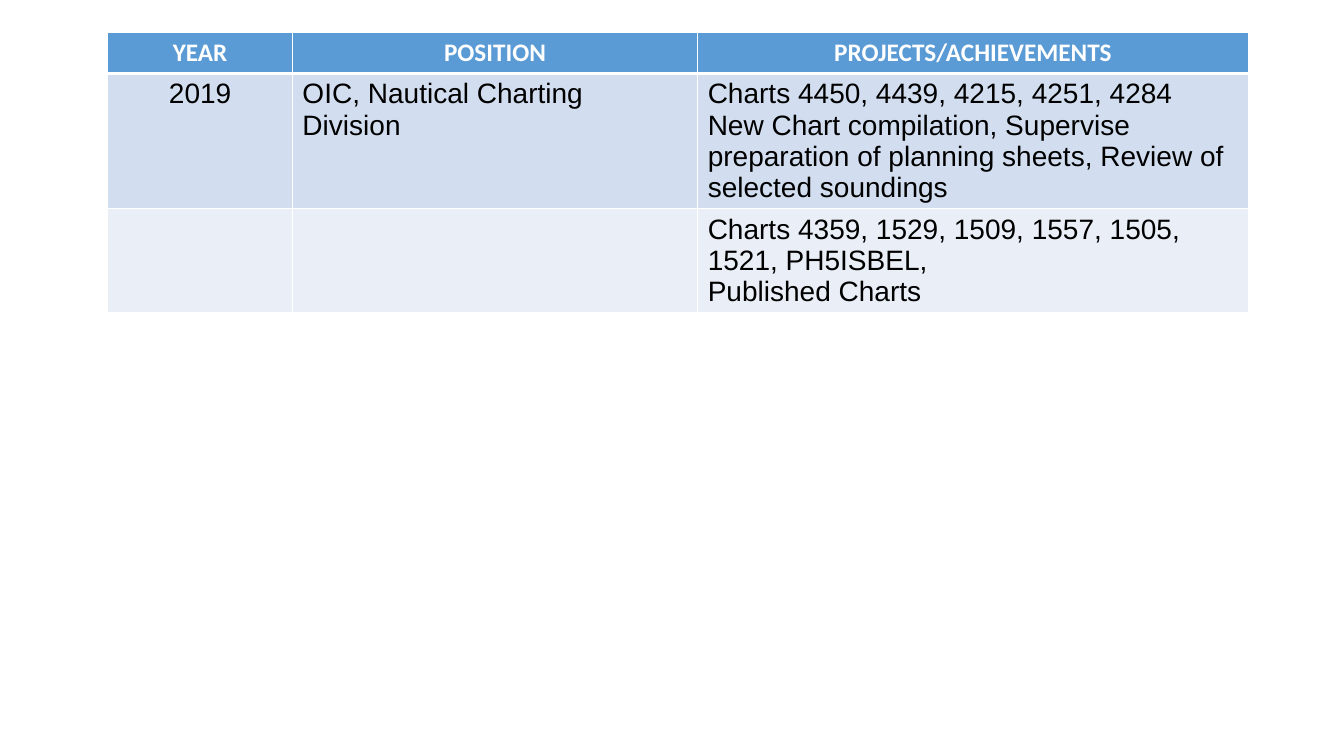
from lxml.etree import SubElement
from pptx import Presentation
from pptx.dml.color import RGBColor
from pptx.enum.text import PP_ALIGN
from pptx.oxml.ns import qn
from pptx.util import Inches, Pt


def color(value):
    return RGBColor.from_string(value)


def add_borders(cell, widths):
    properties = cell._tc.get_or_add_tcPr()
    for position, (side, points) in enumerate(widths.items()):
        line = SubElement(properties, qn(f"a:ln{side}"), w=str(Pt(points)))
        fill = SubElement(line, qn("a:solidFill"))
        SubElement(fill, qn("a:srgbClr"), val="FFFFFF")
        properties.insert(position, line)


deck = Presentation()
deck.slide_width = Inches(13.33)
deck.slide_height = Inches(7.5)
page = deck.slides.add_slide(deck.slide_layouts[6])

column_widths = [1.83, 4.02, 5.46]
row_fills = ["5B9BD5", "D2DEEF", "EAEFF7"]
header_format = {"name": "Calibri", "size": Pt(18), "bold": True}
body_format = {"name": "Arial", "size": Pt(20), "bold": False}
career_rows = [
    [["YEAR"], ["POSITION"], ["PROJECTS/ACHIEVEMENTS"]],
    [
        ["2019"],
        ["OIC, Nautical Charting Division"],
        [
            "Charts 4450, 4439, 4215, 4251, 4284",
            "New Chart compilation, Supervise preparation of planning sheets, Review of selected soundings",
        ],
    ],
    [
        [],
        [],
        ["Charts 4359, 1529, 1509, 1557, 1505, 1521, PH5ISBEL,", "Published Charts"],
    ],
]

frame = page.shapes.add_table(
    len(career_rows), len(column_widths),
    Inches(1.07), Inches(0.32), Inches(11.31), Inches(2.94),
)
table = frame.table
for column, width in zip(table.columns, column_widths):
    column.width = Inches(width)

for row_index, cells in enumerate(career_rows):
    table.rows[row_index].height = Inches(0.41)
    is_header = row_index == 0
    text_format = header_format if is_header else body_format
    for column_index, lines in enumerate(cells):
        cell = table.cell(row_index, column_index)
        cell.fill.solid()
        cell.fill.fore_color.rgb = color(row_fills[row_index])
        add_borders(cell, {
            "L": 1, "R": 1,
            "T": 3 if row_index == 1 else 1,
            "B": 3 if is_header else 1,
        })
        cell.text_frame.text = "\n".join(lines)
        for para in cell.text_frame.paragraphs:
            centered = is_header or column_index == 0
            para.alignment = PP_ALIGN.CENTER if centered else PP_ALIGN.LEFT
            for span in para.runs:
                for name, value in text_format.items():
                    setattr(span.font, name, value)
                span.font.color.rgb = color("FFFFFF" if is_header else "000000")

frame.height = Inches(2.94)
deck.save("out.pptx")
